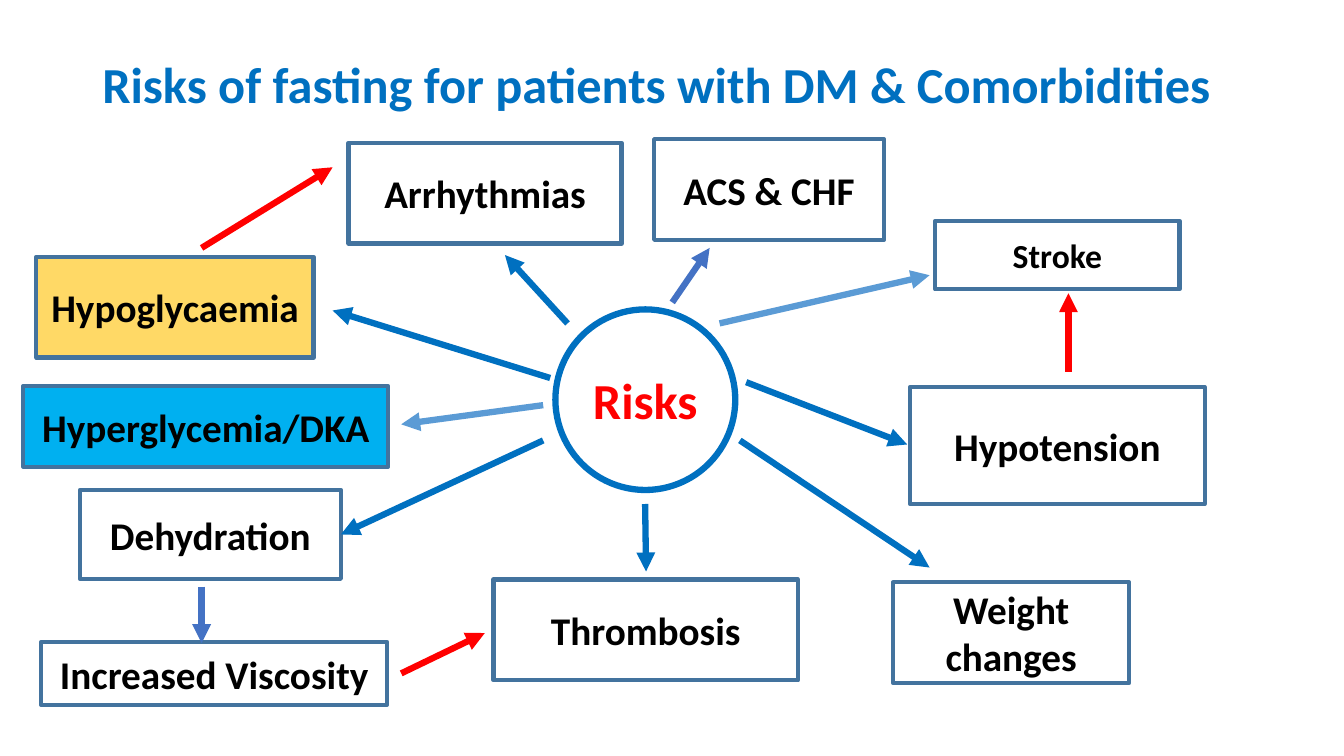
from lxml.etree import SubElement
from pptx import Presentation
from pptx.dml.color import RGBColor
from pptx.enum.shapes import MSO_CONNECTOR, MSO_SHAPE
from pptx.enum.text import MSO_ANCHOR, PP_ALIGN
from pptx.oxml.ns import qn
from pptx.util import Pt

BLUE = RGBColor(0x00, 0x70, 0xC0)
INDIGO = RGBColor(0x44, 0x72, 0xC4)
LIGHT_BLUE = RGBColor(0x5B, 0x9B, 0xD5)
SKY = RGBColor(0x00, 0xB0, 0xF0)
STEEL = RGBColor(0x43, 0x73, 0x9E)
GOLD = RGBColor(0xFF, 0xD9, 0x66)
RED = RGBColor(0xFF, 0x00, 0x00)
BLACK = RGBColor(0x00, 0x00, 0x00)
WHITE = RGBColor(0xFF, 0xFF, 0xFF)


def write(shape, text, size=28, color=BLACK, align=PP_ALIGN.CENTER, spacing=1.0):
    frame = shape.text_frame
    frame.word_wrap = True
    frame.vertical_anchor = MSO_ANCHOR.MIDDLE
    paragraph = frame.paragraphs[0]
    paragraph.alignment = align
    paragraph.line_spacing = spacing
    run = paragraph.add_run()
    run.text = text
    run.font.name = "Calibri"
    run.font.size = Pt(size)
    run.font.bold = True
    run.font.color.rgb = color


def add_node(kind, bounds, fill, outline, weight):
    """Add a filled, outlined shape without a shadow."""
    node = slide.shapes.add_shape(kind, *map(Pt, bounds))
    node.shadow.inherit = False
    node.fill.solid()
    node.fill.fore_color.rgb = fill
    node.line.color.rgb = outline
    node.line.width = Pt(weight)
    return node


deck = Presentation()
deck.slide_width, deck.slide_height = Pt(960), Pt(540)
slide = deck.slides.add_slide(deck.slide_layouts[6])

title = slide.shapes.add_textbox(Pt(66), Pt(42.5), Pt(828), Pt(40))
write(title, "Risks of fasting for patients with DM & Comorbidities",
      size=36, color=BLUE, align=PP_ALIGN.LEFT, spacing=0.9)

hub = add_node(MSO_SHAPE.OVAL, (396.7, 221, 128.5, 129), WHITE, BLUE, 4.5)
write(hub, "Risks", size=36, color=RED)

# Text, (left, top, width, height), fill, text size
risks = [
    ("Hypoglycaemia", (26, 183.5, 198, 72), GOLD, 28),
    ("Hypotension", (650, 276.5, 210.5, 83.5), WHITE, 28),
    ("Arrhythmias", (249, 102, 195, 72), WHITE, 28),
    ("Dehydration", (57, 350, 186.5, 63.5), WHITE, 28),
    ("Thrombosis", (352.5, 414, 217.5, 72), WHITE, 28),
    ("Weight changes", (638, 416, 168.5, 72), WHITE, 28),
    ("Increased Viscosity", (29.5, 458.5, 247, 45), WHITE, 28),
    ("Stroke", (668, 157.7, 174.5, 49), WHITE, 24),
    ("ACS & CHF", (467.3, 99.4, 164, 72), WHITE, 28),
    ("Hyperglycemia/DKA", (16.6, 275.8, 260.6, 57.6), SKY, 28),
]
risk_boxes = {}
for text, bounds, fill, size in risks:
    risk_boxes[text] = add_node(MSO_SHAPE.RECTANGLE, bounds, fill, STEEL, 3)
    write(risk_boxes[text], text, size=size)

# Start x, y, end x, y, colour, box joined at its right side
arrows = [
    (393, 270, 237.6, 221.8, BLUE, None),
    (388, 314.6, 243.5, 381.75, BLUE, "Dehydration"),
    (533, 273, 648, 317.5, BLUE, None),
    (528.5, 314.6, 664, 405.4, BLUE, None),
    (405.4, 231, 360.7, 182.2, BLUE, None),
    (460.8, 360, 461.5, 408.2, BLUE, None),
    (144, 419, 144, 459.4, INDIGO, None),
    (286.6, 481, 346.3, 452.2, RED, None),
    (763.2, 265.7, 763.2, 209.5, RED, None),
    (144, 177.1, 237.6, 119.5, RED, None),
    (514, 231, 664, 196.6, LIGHT_BLUE, None),
    (480.2, 216, 506.9, 177.1, INDIGO, None),
    (388, 289.4, 286.6, 303.1, LIGHT_BLUE, None),
]
for *ends, color, joined in arrows:
    arrow = slide.shapes.add_connector(MSO_CONNECTOR.STRAIGHT, *map(Pt, ends))
    arrow.line.color.rgb = color
    arrow.line.width = Pt(4.5)
    properties = arrow._element.spPr
    SubElement(properties.find(qn("a:ln")), qn("a:tailEnd"), type="triangle")
    SubElement(properties, qn("a:effectLst"))
    if joined:
        arrow.end_connect(risk_boxes[joined], 3)

deck.save("out.pptx")
